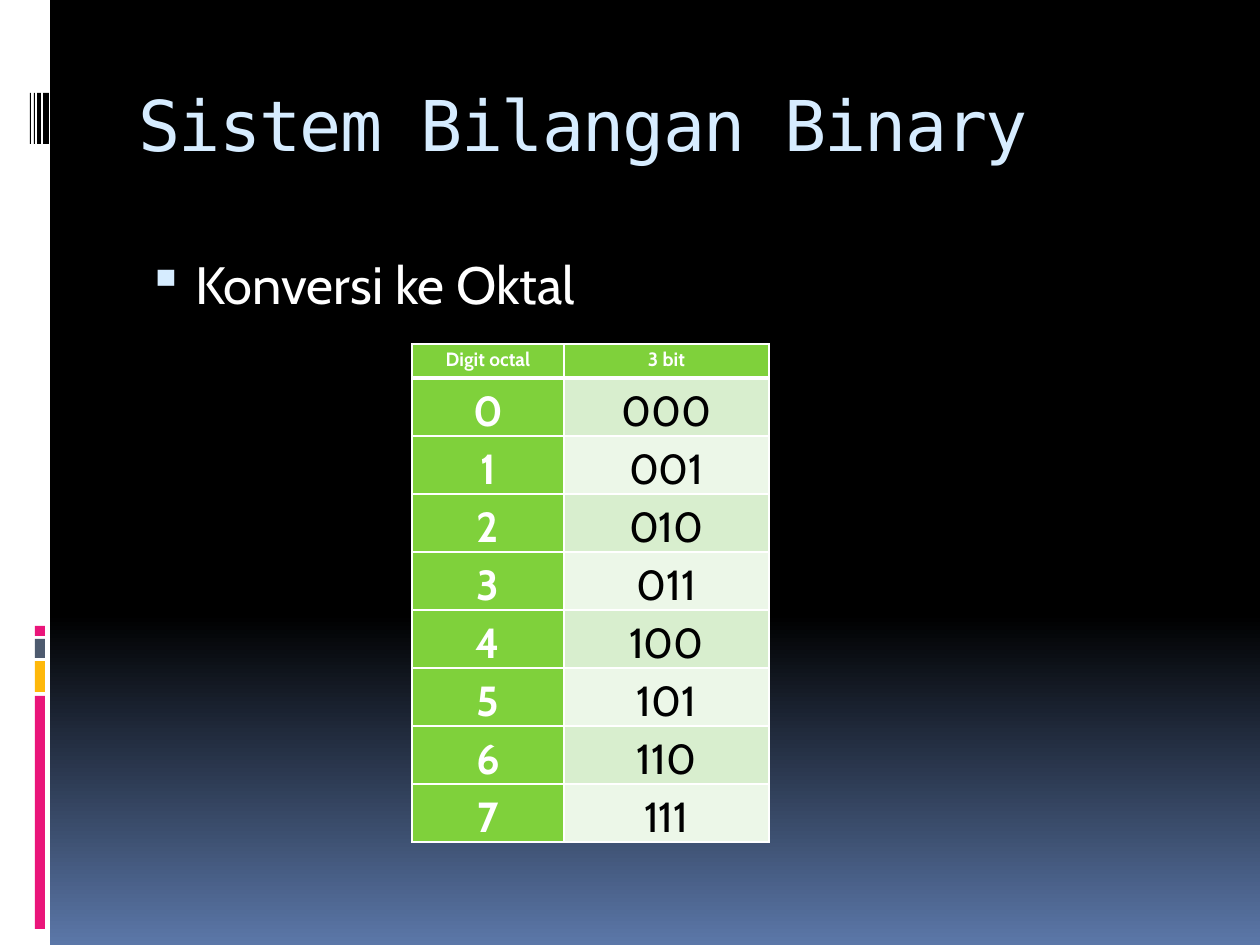
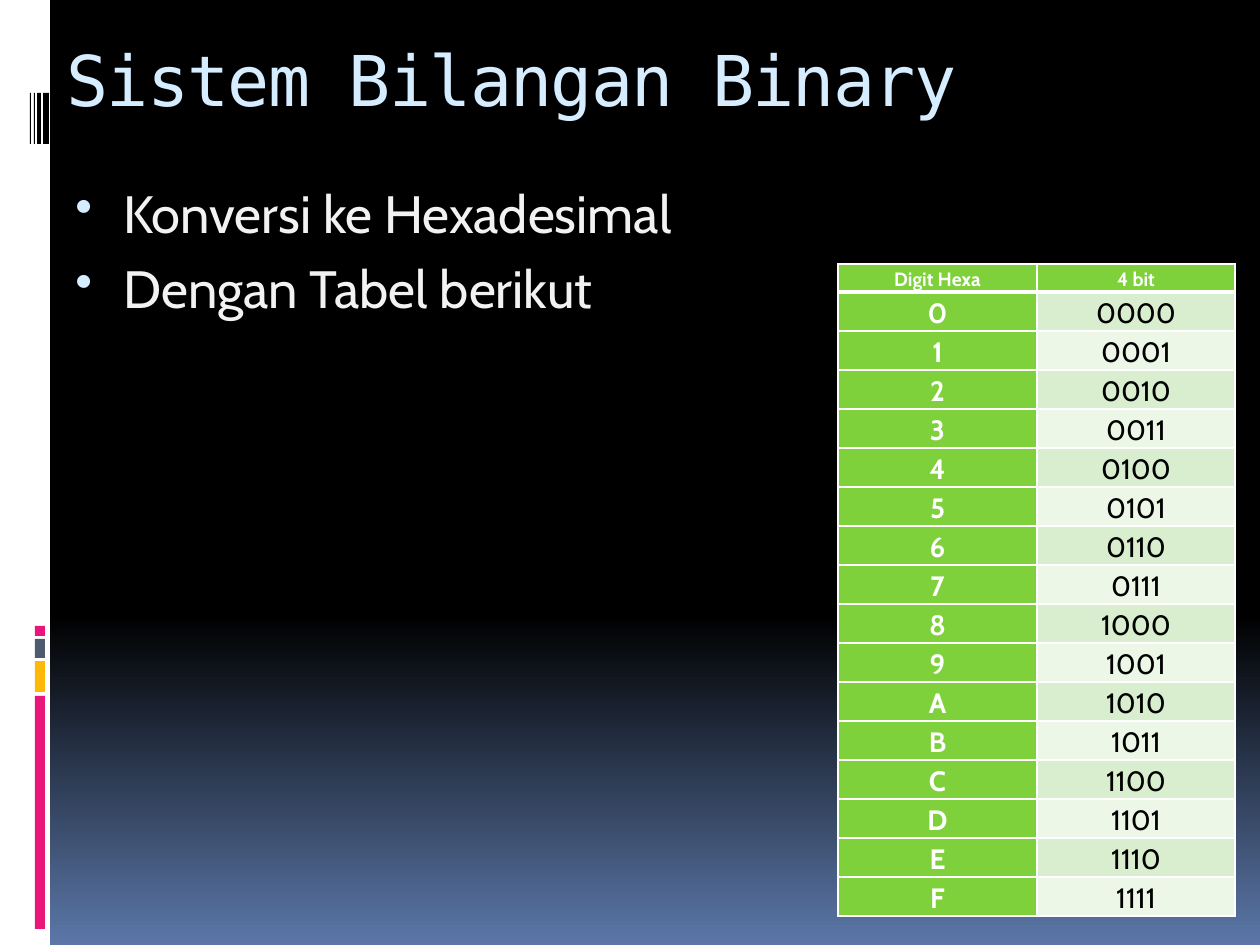
from copy import deepcopy

from lxml import etree
from pptx import Presentation
from pptx.dml.color import RGBColor
from pptx.enum.shapes import MSO_SHAPE
from pptx.enum.text import PP_ALIGN
from pptx.oxml.ns import qn
from pptx.util import Emu, Pt

PX = 914400 / 126
RECTANGLE = MSO_SHAPE.RECTANGLE
LEFT, CENTER = PP_ALIGN.LEFT, PP_ALIGN.CENTER

BLACK = RGBColor(0x00, 0x00, 0x00)
WHITE = RGBColor(0xFF, 0xFF, 0xFF)
OFF_WHITE = RGBColor(0xF2, 0xF2, 0xF2)
DUSK = RGBColor(0x5B, 0x77, 0xA8)
ICE = RGBColor(0xD6, 0xEC, 0xFF)
PINK = RGBColor(0xEA, 0x15, 0x7A)
AMBER = RGBColor(0xFE, 0xB8, 0x0A)
SLATE = RGBColor(0x4E, 0x5B, 0x6F)
GREEN = RGBColor(0x7F, 0xD1, 0x3B)
GREEN_TINTS = [RGBColor(0xD8, 0xEE, 0xCE), RGBColor(0xEC, 0xF7, 0xE8)]

BODY_FONT = "Cabin"
TITLE_FONT = "DejaVu Sans Mono"
TITLE = "Sistem Bilangan Binary"

SIDE_BAND = [
    (0, 0, 50, 945, WHITE),
    (35, 696, 10, 233, PINK),
    (35, 661, 10, 31, AMBER),
    (35, 639, 10, 19, SLATE),
    (35, 626, 10, 10, PINK),
    (43, 93, 6, 51, BLACK),
    (37, 93, 4, 51, BLACK),
    (34, 93, 1, 51, BLACK),
    (30, 93, 1, 51, BLACK),
]

CONVERSIONS = [
    dict(title_box=(126, 71, 1071, 126), body_box=(126, 246, 1071, 630),
         points=["Konversi ke Oktal"], bullet="▪", margin=57, body_color=WHITE,
         headers=["Digit octal", "3 bit"], bits=3, digit_size=24,
         table_at=(412, 344), columns=[152, 205], header_height=34, row_height=58),
    dict(title_box=(54, 26, 1134, 129), body_box=(63, 175, 1134, 745),
         points=["Konversi ke Hexadesimal", "Dengan Tabel berikut"],
         bullet="•", margin=48, body_color=OFF_WHITE,
         headers=["Digit Hexa", "4 bit"], bits=4, digit_size=16,
         table_at=(838, 264), columns=[199, 198], header_height=28, row_height=39),
]


def px(length):
    return Emu(round(length * PX))


def write(paragraph, text, size, color, font=BODY_FONT, bold=False, align=LEFT,
          tracking=0, bullet=None, margin=0, before=0, after=0, leading=1):
    if bullet:
        properties = paragraph._p.get_or_add_pPr()
        properties.set("marL", str(px(margin)))
        properties.set("indent", str(px(-48)))
        bullet_color = etree.SubElement(properties, qn("a:buClr"))
        etree.SubElement(bullet_color, qn("a:srgbClr"), val=str(ICE))
        etree.SubElement(properties, qn("a:buSzPct"), val="95000")
        etree.SubElement(properties, qn("a:buChar"), char=bullet)
    paragraph.alignment = align
    paragraph.line_spacing = leading
    paragraph.space_before = Pt(before)
    paragraph.space_after = Pt(after)
    run = paragraph.add_run()
    run.text = text
    run.font.name = font
    run.font.size = Pt(size)
    run.font.bold = bold
    run.font.color.rgb = color
    if tracking:
        run.font._element.set("spc", str(tracking * 100))


deck = Presentation()
deck.slide_width, deck.slide_height = px(1260), px(945)

for conversion in CONVERSIONS:
    slide = deck.slides.add_slide(deck.slide_layouts[6])

    backdrop = slide.background.fill
    backdrop.gradient()
    backdrop.gradient_angle = 270
    stop_list = slide.element.find(".//" + qn("a:gsLst"))
    stop_list.insert(0, deepcopy(stop_list[0]))
    for stop, position, color in zip(backdrop.gradient_stops, (0, 0.65, 1), (BLACK, BLACK, DUSK)):
        stop.position = position
        stop.color.rgb = color

    for left, top, width, height, color in SIDE_BAND:
        bar = slide.shapes.add_shape(RECTANGLE, px(left), px(top), px(width), px(height))
        bar.shadow.inherit = False
        bar.fill.solid()
        bar.fill.fore_color.rgb = color
        bar.line.fill.background()

    heading = slide.shapes.add_textbox(*map(px, conversion["title_box"])).text_frame
    heading.word_wrap = True
    heading.margin_top = px(11)
    write(heading.paragraphs[0], TITLE, 40, ICE, font=TITLE_FONT, tracking=-1)

    body = slide.shapes.add_textbox(*map(px, conversion["body_box"])).text_frame
    body.word_wrap = True
    for index, point in enumerate(conversion["points"]):
        paragraph = body.add_paragraph() if index else body.paragraphs[0]
        write(paragraph, point, 30, conversion["body_color"], bullet=conversion["bullet"],
              margin=conversion["margin"], before=7 if index else 0)

    bits = conversion["bits"]
    rows = [conversion["headers"]]
    rows += [[f"{value:X}", f"{value:0{bits}b}"] for value in range(2 ** bits)]
    heights = [conversion["header_height"]] + [conversion["row_height"]] * 2 ** bits
    table = slide.shapes.add_table(
        len(rows), 2, *map(px, conversion["table_at"]),
        px(sum(conversion["columns"])), px(sum(heights))).table
    table.first_row = table.horz_banding = False
    for column, width in zip(table.columns, conversion["columns"]):
        column.width = px(width)

    for row_index, row in enumerate(rows):
        table.rows[row_index].height = px(heights[row_index])
        for column_index, text in enumerate(row):
            cell = table.cell(row_index, column_index)
            cell.margin_left = cell.margin_right = px(9)
            cell.margin_top = cell.margin_bottom = 0
            is_label = row_index == 0 or column_index == 0
            for side in ("L", "R", "T", "B"):
                under_header = (row_index, side) in ((0, "B"), (1, "T"))
                border = etree.SubElement(cell._tc.get_or_add_tcPr(), qn("a:ln" + side),
                                          w=str(Pt(3 if under_header else 1)))
                border_fill = etree.SubElement(border, qn("a:solidFill"))
                etree.SubElement(border_fill, qn("a:srgbClr"), val=str(WHITE))
            cell.fill.solid()
            cell.fill.fore_color.rgb = GREEN if is_label else GREEN_TINTS[(row_index - 1) % 2]
            write(cell.text_frame.paragraphs[0], text,
                  conversion["digit_size"] if row_index else 11,
                  WHITE if is_label else BLACK, bold=is_label, align=CENTER,
                  after=10, leading=1.15)

deck.save("out.pptx")
